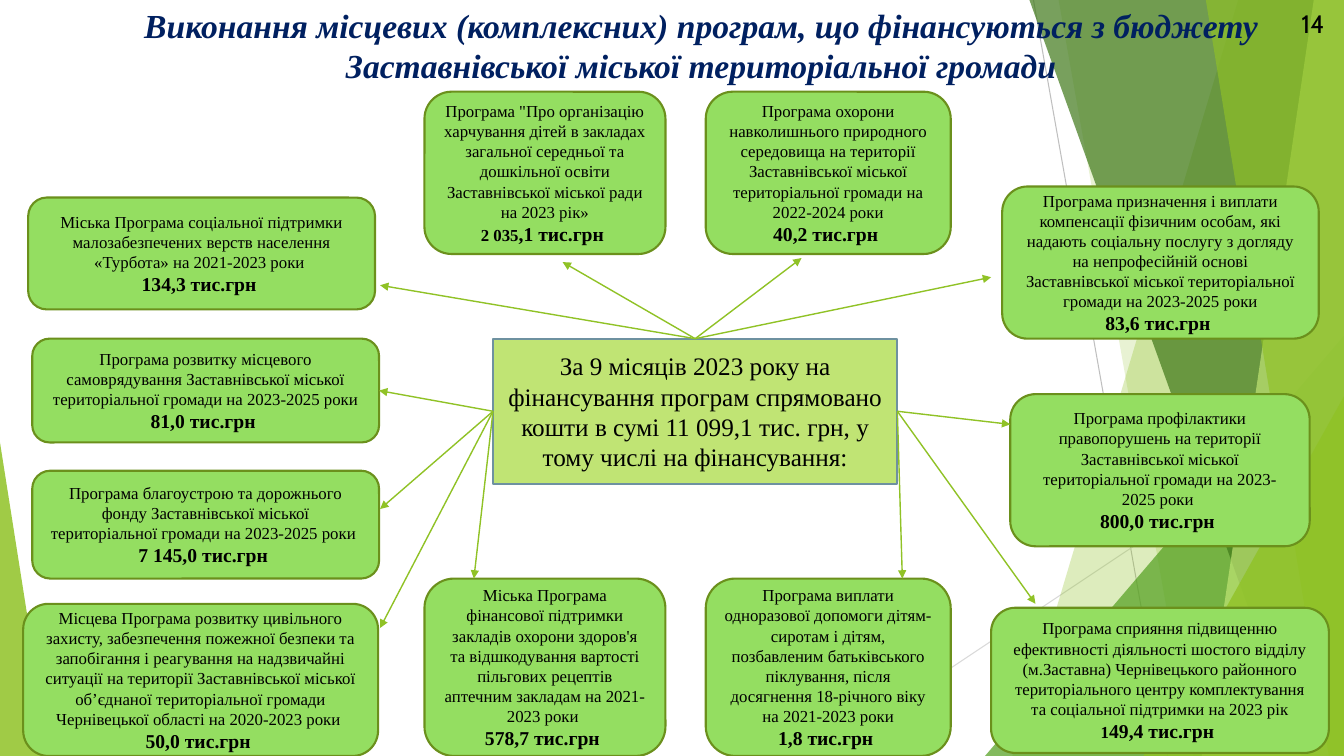
from lxml import etree
from pptx import Presentation
from pptx.dml.color import RGBColor
from pptx.enum.shapes import MSO_CONNECTOR, MSO_SHAPE
from pptx.enum.text import MSO_ANCHOR, PP_ALIGN
from pptx.oxml.ns import qn
from pptx.util import Inches, Pt

W, H = 13.33, 7.5
SERIF = "Times New Roman"
GREEN = "90C226"

TITLE = ("Виконання місцевих (комплексних) програм, що фінансуються з бюджету \v"
         "Заставнівської міської територіальної громади ")
SUMMARY = ("За 9 місяців 2023 року на фінансування програм спрямовано кошти в сумі "
           "11\u00a0099,1 тис. грн, у тому числі на фінансування:")
PAGE = "14"

# Columns: left, width. Rows: top, height.
COLS = {"left": (0.32, 3.44), "left top": (0.28, 3.44), "left bottom": (0.23, 3.52),
        "inner left": (4.21, 2.39), "inner right": (7, 2.43), "centre": (4.89, 4.01),
        "right top": (9.94, 3.14), "right": (10.02, 2.97), "right bottom": (9.83, 3.35)}
ROWS = {"inner top": (0.91, 1.61), "inner bottom": (5.74, 1.76), "centre": (3.36, 1.44),
        "left 1": (1.96, 1.11), "left 2": (3.36, 1.03), "left 3": (4.67, 1.07),
        "left 4": (5.99, 1.51), "right 1": (1.85, 1.51), "right 2": (3.91, 1.51),
        "right 3": (6.03, 1.44)}

# Column, row, programme, amount as (small part, large part)
PROGRAMS = [
    ("left", "left 2", "Програма розвитку місцевого самоврядування Заставнівської міської "
     "територіальної громади на 2023-2025 роки", ("", "81,0")),
    ("left", "left 3", "Програма благоустрою та дорожнього фонду Заставнівської міської "
     "територіальної громади на 2023-2025 роки ", ("", "7 145,0")),
    ("left bottom", "left 4", "Місцева Програма розвитку цивільного захисту, забезпечення "
     "пожежної безпеки та запобігання і реагування на надзвичайні ситуації на території "
     "Заставнівської міської об’єднаної територіальної громади Чернівецької області "
     "на 2020-2023 роки ", ("", "50,0")),
    ("left top", "left 1", "Міська Програма соціальної підтримки малозабезпечених верств "
     "населення «Турбота» на 2021-2023 роки ", ("", "134,3")),
    ("inner left", "inner bottom", "Міська Програма фінансової підтримки закладів охорони "
     "здоров'я та відшкодування вартості пільгових рецептів аптечним закладам "
     "на 2021-2023 роки ", ("", "578,7")),
    ("inner right", "inner bottom", "Програма виплати одноразової допомоги дітям-сиротам і "
     "дітям, позбавленим батьківського піклування, після досягнення 18-річного віку "
     "на 2021-2023 роки", ("", "1,8")),
    ("inner left", "inner top", "Програма \"Про організацію харчування дітей в закладах "
     "загальної середньої та дошкільної освіти Заставнівської міської ради на 2023 рік»",
     ("2 035", ",1")),
    ("right top", "right 1", "Програма призначення і виплати компенсації фізичним особам, які "
     "надають соціальну послугу з догляду на непрофесійній основі Заставнівської міської "
     "територіальної громади на 2023-2025 роки", ("", "83,6")),
    ("inner right", "inner top", "Програма охорони навколишнього природного середовища на "
     "території Заставнівської міської територіальної громади на 2022-2024 роки", ("", "40,2")),
    ("right bottom", "right 3", "Програма сприяння підвищенню ефективності діяльності шостого "
     "відділу (м.Заставна) Чернівецького районного територіального центру комплектування "
     "та соціальної підтримки на 2023 рік", ("1", "49,4")),
    ("right", "right 2", "Програма профілактики правопорушень на території Заставнівської "
     "міської територіальної громади на 2023-2025 роки ", ("", "800,0")),
]

# Side of the central box -> arrow tips
TOP, LEFT, RIGHT = 0, 1, 3
ARROWS = {TOP: [(5.58, 2.6), (7.95, 2.56), (9.83, 2.75), (3.77, 2.83)],
          LEFT: [(3.76, 3.87), (3.77, 5.05), (3.77, 6.23), (4.7, 5.74)],
          RIGHT: [(10.02, 4.21), (10.27, 5.99), (8.95, 5.74)]}
JOINED_TIP, JOINED_ROW = (3.76, 3.87), "left 2"

# Backdrop, back to front
RAYS = [((10.25, 0), (11.58, H), "BFBFBF"), ((W, 4.03), (8.12, H), "D9D9D9")]
# Bands: top left x, bottom left x, colour, opacity. They reach the right edge.
# Triangles: left, top, width, apex, colour, opacity. They stand on the bottom edge.
BACKDROP = [("band", 12.28, 10.04, GREEN, 30), ("band", 10.5, 11.83, GREEN, 20),
            ("triangle", 9.77, 3.33, 3.56, 1, "54A021", 72),
            ("band", 10.21, 12.91, "3F7819", 70), ("band", 13.03, 11.92, "C0E474", 70),
            ("band", 11.96, 13.18, GREEN, 65),
            ("triangle", 11.34, 3.93, 1.99, 1, GREEN, 80),
            ("triangle", 0, 4.39, 0.49, 0, GREEN, 85)]


def rgb(value):
    return RGBColor.from_string(value)


def paint(sp, color, opacity=100, border=None):
    sp.shadow.inherit = False
    sp.fill.solid()
    sp.fill.fore_color.rgb = rgb(color)
    if opacity < 100:
        clr = sp.fill._xPr.find(qn("a:solidFill"))[0]
        etree.SubElement(clr, qn("a:alpha")).set("val", str(opacity * 1000))
    if border:
        sp.line.color.rgb = rgb(border)
        sp.line.width = Pt(1.5)
    else:
        sp.line.fill.background()


def add_line(slide, start, end, color, width):
    cn = slide.shapes.add_connector(MSO_CONNECTOR.STRAIGHT, *map(Inches, start + end))
    cn.line.color.rgb = rgb(color)
    cn.line.width = Pt(width)
    etree.SubElement(cn._element.spPr, qn("a:effectLst"))
    return cn


def add_band(slide, x_top, x_bottom, color, opacity):
    corners = [(W, 0), (W, H), (x_bottom, H)]
    fb = slide.shapes.build_freeform(Inches(x_top), 0, scale=1.0)
    fb.add_line_segments([(Inches(x), Inches(y)) for x, y in corners], close=True)
    paint(fb.convert_to_shape(), color, opacity)


def add_triangle(slide, x, y, w, apex, color, opacity):
    sp = slide.shapes.add_shape(MSO_SHAPE.ISOSCELES_TRIANGLE, *map(Inches, (x, y, w, H - y)))
    sp.adjustments[0] = apex
    paint(sp, color, opacity)


def add_run(p, text, size, color="000000", font=SERIF, bold=False, italic=False):
    r = p.add_run()
    r.text = text
    r.font.size, r.font.name = Pt(size), font
    r.font.bold, r.font.italic = bold, italic
    r.font.color.rgb = rgb(color)


def add_box(slide, kind, col, row, fill, border):
    (x, w), (y, h) = COLS[col], ROWS[row]
    sp = slide.shapes.add_shape(kind, *map(Inches, (x, y, w, h)))
    paint(sp, fill, border=border)
    sp.text_frame.word_wrap = True
    sp.text_frame.vertical_anchor = MSO_ANCHOR.MIDDLE
    sp.text_frame.paragraphs[0].alignment = PP_ALIGN.CENTER
    return sp


def add_program(slide, col, row, name, amount):
    sp = add_box(slide, MSO_SHAPE.ROUNDED_RECTANGLE, col, row, "94DE61", "6B901C")
    tf = sp.text_frame
    add_run(tf.paragraphs[0], name, 12)
    p = tf.add_paragraph()
    p.alignment = PP_ALIGN.CENTER
    small, large = amount
    if small:
        add_run(p, small, 12, bold=True)
    add_run(p, large + " тис.грн ", 14, bold=True)
    return sp


def add_heading(slide):
    tf = slide.shapes.add_textbox(*map(Inches, (0.66, 0, W - 0.66, 0.82))).text_frame
    tf.word_wrap = True
    p = tf.paragraphs[0]
    p.text = TITLE
    p.alignment = PP_ALIGN.CENTER
    for r in p.runs:
        r.font.size, r.font.name = Pt(24), SERIF
        r.font.bold = r.font.italic = True
        r.font.color.rgb = rgb("002060")


def main():
    prs = Presentation()
    prs.slide_width, prs.slide_height = Inches(W), Inches(H)
    slide = prs.slides.add_slide(prs.slide_layouts[6])

    for start, end, color in RAYS:
        add_line(slide, start, end, color, 0.75)
    for kind, *args in BACKDROP:
        (add_band if kind == "band" else add_triangle)(slide, *args)
    add_heading(slide)

    centre = add_box(slide, MSO_SHAPE.RECTANGLE, "centre", "centre", "C0E474", "6E91A0")
    add_run(centre.text_frame.paragraphs[0], SUMMARY, 18)
    boxes = {(col, row): add_program(slide, col, row, name, amount)
             for col, row, name, amount in PROGRAMS}

    (x, w), (y, h) = COLS["centre"], ROWS["centre"]
    origins = {TOP: (x + w / 2, y), LEFT: (x, y + h / 2), RIGHT: (x + w, y + h / 2)}
    for side, tips in ARROWS.items():
        for tip in tips:
            cn = add_line(slide, origins[side], tip, GREEN, 1)
            cn.begin_connect(centre, side)
            if tip == JOINED_TIP:
                cn.end_connect(boxes["left", JOINED_ROW], RIGHT)
            etree.SubElement(cn.line._get_or_add_ln(), qn("a:tailEnd")).set("type", "triangle")

    number = slide.shapes.add_textbox(*map(Inches, (12.81, 0.03, 0.5, 0.4)))
    number.text_frame.word_wrap = True
    add_run(number.text_frame.paragraphs[0], PAGE, 18, font="Cabin")
    prs.save("out.pptx")


if __name__ == "__main__":
    main()
